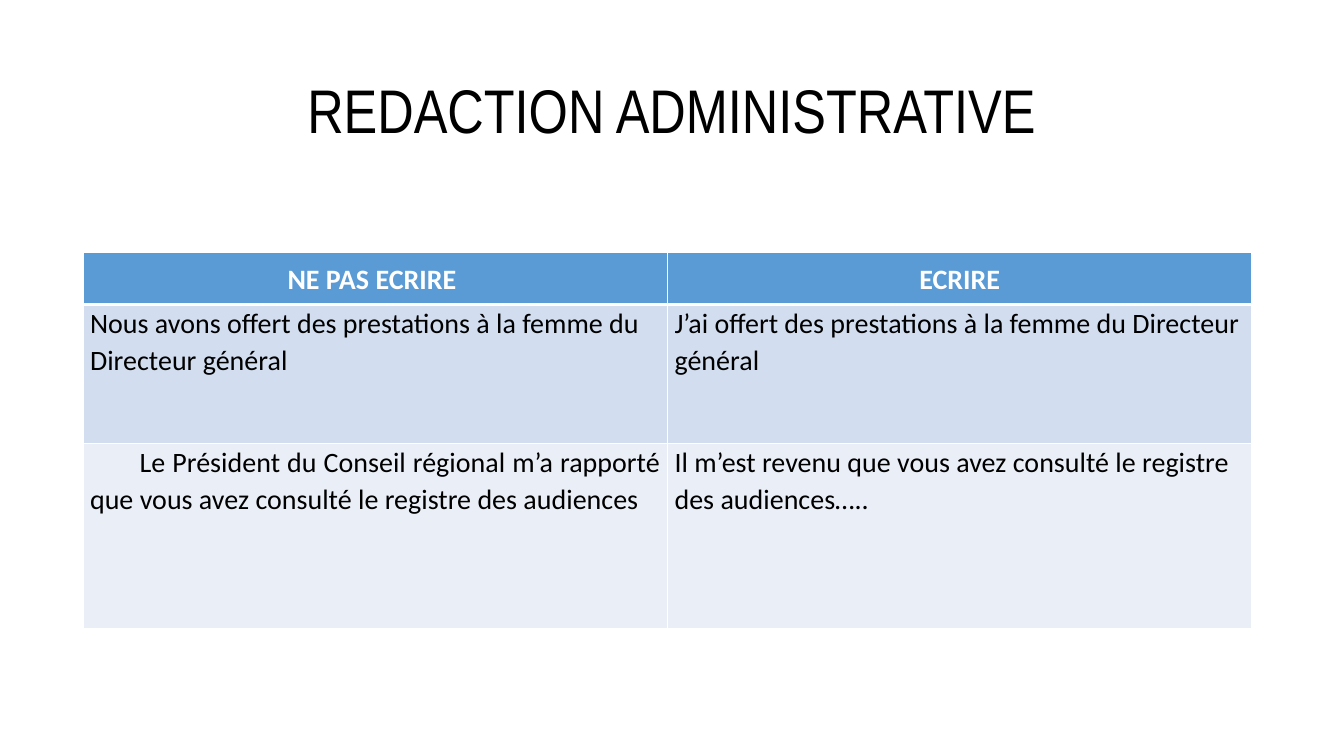
from dataclasses import dataclass

from lxml import etree
from pptx import Presentation
from pptx.dml.color import RGBColor
from pptx.enum.text import MSO_ANCHOR, PP_ALIGN
from pptx.oxml.ns import qn
from pptx.util import Cm, Pt

LEFT, CENTER, JUSTIFY = PP_ALIGN.LEFT, PP_ALIGN.CENTER, PP_ALIGN.JUSTIFY
TOP, MIDDLE = MSO_ANCHOR.TOP, MSO_ANCHOR.MIDDLE
TITLE_ONLY = 5

TITLE = "REDACTION ADMINISTRATIVE"
ROWS = [
    ("NE PAS ECRIRE ", "ECRIRE"),
    ("Nous avons offert des prestations à la femme du Directeur général",
     "J’ai offert des prestations à la femme du Directeur général"),
    ("Le Président du Conseil régional m’a rapporté que vous avez consulté "
     "le registre des audiences ",
     "Il m’est revenu que vous avez consulté le registre des audiences….."),
]
INDENTED_CELL = (2, 0)

TITLE_BOX = (Cm(2.33), Cm(1.02), Cm(29.21), Cm(3.68))
TABLE_LEFT, TABLE_TOP = Cm(2.09), Cm(6.36)
COLUMN_WIDTH = Cm(14.73)
ROW_HEIGHTS = [Cm(1.31), Cm(3.5), Cm(4.66)]
FIRST_LINE_INDENT = Cm(1.25)


@dataclass(frozen=True)
class Theme:
    title_font: str = "Arial Narrow"
    body_font: str = "Calibri"
    title_size: int = 44
    body_size: int = 20
    dark: str = "000000"
    light: str = "FFFFFF"
    row_fills: tuple = ("5B9BD5", "D2DEEF", "EAEFF7")
    border: int = 1
    header_border: int = 3


THEME = Theme()
CELL_FORMAT = {"margin_left": Cm(0.18), "margin_right": Cm(0.18),
               "margin_top": Cm(0), "margin_bottom": Cm(0)}


def apply_format(target, values):
    for name, value in values.items():
        setattr(target, name, value)


def write(frame, text, font, color, para_format):
    frame.text = text
    para = frame.paragraphs[0]
    apply_format(para, para_format)
    span = para.runs[0]
    apply_format(span.font, font)
    span.font.color.rgb = RGBColor.from_string(color)


def add_borders(cell, widths):
    """Draw cell borders; widths maps a side (L, R, T, B) to points."""
    properties = cell._tc.get_or_add_tcPr()
    for position, (side, width) in enumerate(widths.items()):
        line = etree.Element(qn(f"a:ln{side}"), w=str(Pt(width)))
        fill = etree.SubElement(line, qn("a:solidFill"))
        etree.SubElement(fill, qn("a:srgbClr"), val=THEME.light)
        properties.insert(position, line)


def add_title(page):
    title = page.shapes.title
    apply_format(title, dict(zip(("left", "top", "width", "height"), TITLE_BOX)))
    title.text_frame.vertical_anchor = MIDDLE
    write(title.text_frame, TITLE,
          {"name": THEME.title_font, "size": Pt(THEME.title_size)}, THEME.dark,
          {"alignment": CENTER, "line_spacing": 0.9})


def fill_cell(cell, row, column, text):
    header = row == 0
    indented = (row, column) == INDENTED_CELL
    apply_format(cell, CELL_FORMAT)
    cell.vertical_anchor = MIDDLE if header else TOP
    cell.fill.solid()
    cell.fill.fore_color.rgb = RGBColor.from_string(THEME.row_fills[row])
    write(cell.text_frame, text,
          {"name": THEME.body_font, "size": Pt(THEME.body_size), "bold": header},
          THEME.light if header else THEME.dark,
          {"alignment": CENTER if header else JUSTIFY if indented else LEFT,
           "line_spacing": 1.07})
    if indented:
        para_properties = cell.text_frame.paragraphs[0]._p.get_or_add_pPr()
        para_properties.set("indent", str(FIRST_LINE_INDENT))
    add_borders(cell, {"L": THEME.border, "R": THEME.border,
                       "T": THEME.header_border if row == 1 else THEME.border,
                       "B": THEME.header_border if header else THEME.border})


def add_comparison(page):
    columns = len(ROWS[0])
    table = page.shapes.add_table(
        len(ROWS), columns, TABLE_LEFT, TABLE_TOP,
        COLUMN_WIDTH * columns, sum(ROW_HEIGHTS)).table
    for column in table.columns:
        column.width = COLUMN_WIDTH
    for row, (height, texts) in enumerate(zip(ROW_HEIGHTS, ROWS)):
        table.rows[row].height = height
        for column, text in enumerate(texts):
            fill_cell(table.cell(row, column), row, column, text)


def main():
    deck = Presentation()
    deck.slide_width, deck.slide_height = Cm(33.87), Cm(19.05)
    page = deck.slides.add_slide(deck.slide_layouts[TITLE_ONLY])
    add_title(page)
    add_comparison(page)
    deck.save("out.pptx")


if __name__ == "__main__":
    main()
